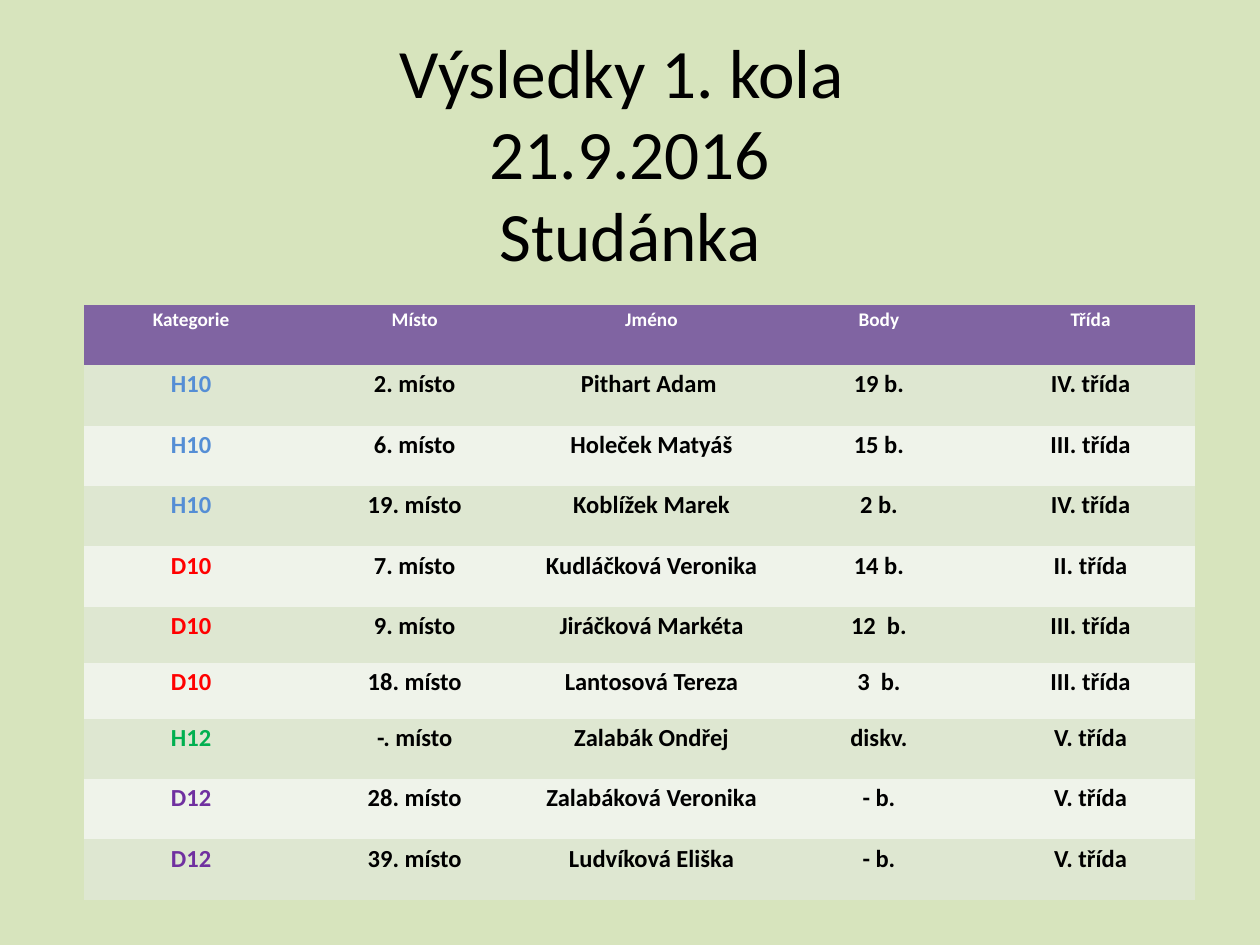
from pptx import Presentation
from pptx.dml.color import RGBColor as Rgb
from pptx.enum.text import MSO_ANCHOR as Anchor, PP_ALIGN as Align
from pptx.oxml.ns import qn
from pptx.util import Pt

FONT = "Calibri"
NO_STYLE = "{2D5ABB26-0587-4C30-8999-92F81FD0307C}"
BLACK, WHITE, GREEN, PURPLE = "000000", "FFFFFF", "D7E4BD", "8064A2"
BANDS = ["DEE7D1", "EFF3EA"]
GROUPS = {"H10": "558ED5", "D10": "FF0000", "H12": "00B050", "D12": "7030A0"}

TITLE = ["Výsledky 1. kola ", "21.9.2016", "Studánka"]
HEAD = ["Kategorie", "Místo", "Jméno", "Body", "Třída"]
RESULTS = [
    ["H10", "2. místo", "Pithart Adam ", "19 b.", "IV. třída"],
    ["H10", "6. místo", "Holeček Matyáš", "15 b.", "III. třída"],
    ["H10", "19. místo", "Koblížek Marek", "2 b.", "IV. třída"],
    ["D10", "7. místo", "Kudláčková Veronika", "14 b.", "II. třída"],
    ["D10", "9. místo", "Jiráčková Markéta", "12  b.", "III. třída"],
    ["D10", "18. místo", "Lantosová Tereza", "3  b.", "III. třída"],
    ["H12", "-. místo", "Zalabák Ondřej", "diskv.", "V. třída"],
    ["D12", "28. místo", "Zalabáková Veronika", "- b.", "V. třída"],
    ["D12", "39. místo", "Ludvíková Eliška", "- b.", "V. třída"],
]
WIDTHS = [122.4, 133.2, 137.5, 122.4, 119.5]
HEIGHTS = [34.5] * 5 + [32] * 2 + [34.5] * 3


def paint(fill, color):
    fill.solid()
    fill.fore_color.rgb = Rgb.from_string(color)


def add_run(para, text, size, color, bold=False):
    run = para.add_run()
    run.text = text
    font = run.font
    font.name, font.size, font.bold = FONT, Pt(size), bold
    font.color.rgb = Rgb.from_string(color)


def add_title(slide, lines):
    box = slide.shapes.add_textbox(Pt(36), Pt(21.6), Pt(648), Pt(134.6))
    frame = box.text_frame
    frame.word_wrap = True
    frame.vertical_anchor = Anchor.MIDDLE
    para = frame.paragraphs[0]
    para.alignment = Align.CENTER
    para.line_spacing = 0.98
    for i, line in enumerate(lines):
        if i:
            para.add_line_break()
        add_run(para, line, 39.6, BLACK)


def fill_cell(cell, text, size, color, back):
    paint(cell.fill, back)
    cell.margin_left = cell.margin_right = Pt(5)
    cell.margin_top = cell.margin_bottom = 0
    para = cell.text_frame.paragraphs[0]
    para.alignment = Align.CENTER
    para.line_spacing = 1.15
    add_run(para, text, size, color, bold=True)


def add_grid(slide):
    frame = slide.shapes.add_table(
        len(HEIGHTS), len(WIDTHS), Pt(48), Pt(174.2),
        Pt(sum(WIDTHS)), Pt(sum(HEIGHTS)))
    # Plain style without borders
    frame.element.find(".//" + qn("a:tableStyleId")).text = NO_STYLE
    table = frame.table
    for col, width in zip(table.columns, WIDTHS):
        col.width = Pt(width)
    for row, height in zip(table.rows, HEIGHTS):
        row.height = Pt(height)

    # Header row
    for c, text in enumerate(HEAD):
        fill_cell(table.cell(0, c), text, 11, WHITE, PURPLE)

    # Banded results, with the category in its own colour
    for r, result in enumerate(RESULTS):
        for c, text in enumerate(result):
            color = GROUPS.get(text, BLACK)
            fill_cell(table.cell(r + 1, c), text, 14, color, BANDS[r % 2])


def main():
    deck = Presentation()
    deck.slide_width, deck.slide_height = Pt(720), Pt(540)
    slide = deck.slides.add_slide(deck.slide_layouts[6])
    paint(slide.background.fill, GREEN)
    add_title(slide, TITLE)
    add_grid(slide)
    deck.save("out.pptx")


if __name__ == "__main__":
    main()
